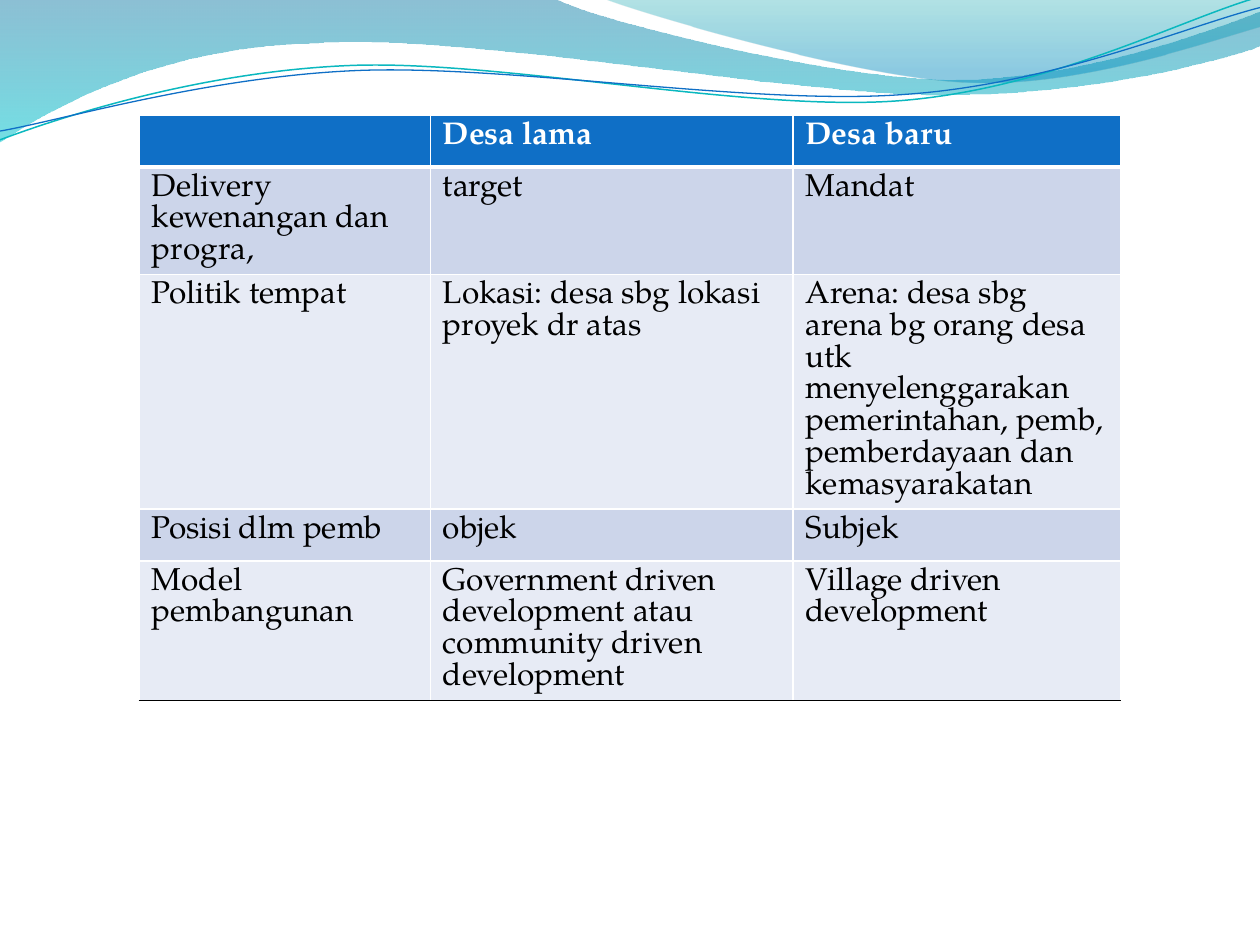
from dataclasses import dataclass
from math import cos, radians, sin
from typing import NamedTuple

from lxml.etree import SubElement
from pptx import Presentation
from pptx.dml.color import RGBColor as Rgb
from pptx.oxml.ns import qn
from pptx.util import Emu, Inches, Pt


class Point(NamedTuple):
    x: float
    y: float


class Curve(NamedTuple):
    lead: Point
    pull: Point
    end: Point


class Stop(NamedTuple):
    position: float
    color: str
    opacity: int


class Edge(NamedTuple):
    color: str
    points: float


@dataclass(frozen=True)
class Theme:
    font: str = "TeX Gyre Pagella"
    text_size: float = 18
    heading: str = "FFFFFF"
    text: str = "000000"
    header_fill: str = "0F6FC6"
    bands: tuple = ("CCD5EA", "E7EBF5")
    grid: Edge = Edge("FFFFFF", 1)
    header_rule: Edge = Edge("FFFFFF", 3)
    closing_rule: Edge = Edge("000000", 1)


@dataclass(frozen=True)
class Wave:
    start: Point
    steps: tuple
    stops: tuple = ()
    edge: Edge | None = None
    tilt: float = 0
    pivot: Point = Point(0, 0)


THEME = Theme()
SLIDE_WIDTH, SLIDE_HEIGHT = Inches(10), Inches(7.5)
GRID_COLUMNS = 100


def curves(*values: float) -> tuple:
    """Group a flat run of coordinates into Bézier curves of three points."""
    points = [Point(*pair) for pair in zip(values[::2], values[1::2])]
    return tuple(Curve(*points[i:i + 3]) for i in range(0, len(points), 3))


WAVES = (
    Wave(Point(0, 0),
         (Point(44, -0.1),
          *curves(47.6, 1.7, 66.4, 6.3, 75.8, 6.3, 85.3, 6.3, 95.8, 2.6, 100, 0.9),
          Point(100.1, 3.6),
          *curves(98.3, 4.4, 87, 7.6, 74.6, 7.5, 62.2, 7.5, 38.2, 2.8, 25.7, 3.4,
                  12.9, 3.6, 4.6, 8.3, -0.1, 11.3)),
         stops=(Stop(0, "0074A1", 45), Stop(1, "00C6CF", 55))),
    Wave(Point(47.9, -0.1),
         (*curves(50.9, 1.1, 68.2, 6.2, 76.9, 6.5, 85.6, 6.9, 96.1, 3.2, 100, 2.1),
          Point(100, 0)),
         stops=(Stop(0, "00A1A9", 30), Stop(0.8, "008BBF", 45))),
    Wave(Point(0, 11.1),
         curves(4.8, 9.3, 15.8, 5.7, 27.7, 5.2, 39.5, 4.7, 59.3, 8.9, 71.3, 8,
                83.3, 7.1, 93.8, 1.5, 99.8, -0.2),
         edge=Edge("0AB8BF", 0.85), tilt=-2.7, pivot=Point(49.9, 5.75)),
    Wave(Point(0, 10.4),
         curves(4.7, 9.6, 16.4, 6.1, 28.3, 5.6, 40.3, 5.1, 59.7, 8.4, 71.7, 7.5,
                83.6, 6.7, 94.1, 2.1, 100, 0.6),
         edge=Edge("0F6FC6", 0.75), tilt=-2.7, pivot=Point(49.95, 5.9)),
)

TABLE_ORIGIN = Point(11.05, 9.15)
COLUMN_WIDTHS = (23.1, 28.8, 26)
ROW_HEIGHT = 4.1
COMPARISON = (
    ("", "Desa lama", "Desa baru"),
    ("Delivery kewenangan dan progra,", "target", "Mandat"),
    ("Politik tempat", "Lokasi: desa sbg lokasi proyek dr atas",
     "Arena: desa sbg arena bg orang desa utk menyelenggarakan pemerintahan, "
     "pemb, pemberdayaan dan kemasyarakatan"),
    ("Posisi dlm pemb", "objek", "Subjek"),
    ("Model pembangunan",
     "Government driven development atau community driven development",
     "Village driven development"),
)


def span(units: float) -> Emu:
    """Convert grid units to a slide length."""
    return Emu(round(SLIDE_WIDTH * units / GRID_COLUMNS))


def place(point: Point, wave: Wave) -> tuple:
    """Return a point's slide position before the wave is tilted."""
    turn = radians(-wave.tilt)
    dx, dy = point.x - wave.pivot.x, point.y - wave.pivot.y
    return (span(wave.pivot.x + dx * cos(turn) - dy * sin(turn)),
            span(wave.pivot.y + dx * sin(turn) + dy * cos(turn)))


def bend(ribbon, steps: tuple) -> None:
    """Join each curve's three straight segments into one cubic segment."""
    segments = iter(ribbon._element.spPr.findall(".//" + qn("a:lnTo")))
    for step in steps:
        first = next(segments)
        if isinstance(step, Curve):
            cubic = first.makeelement(qn("a:cubicBezTo"))
            first.addprevious(cubic)
            for segment in (first, next(segments), next(segments)):
                cubic.append(segment[0])
                segment.getparent().remove(segment)


def draw_wave(slide, wave: Wave) -> None:
    """Draw a gradient band or a thin open line."""
    route = [point for step in wave.steps
             for point in (step if isinstance(step, Curve) else (step,))]
    builder = slide.shapes.build_freeform(*place(wave.start, wave))
    builder.add_line_segments([place(point, wave) for point in route],
                              close=bool(wave.stops))
    ribbon = builder.convert_to_shape()
    bend(ribbon, wave.steps)
    ribbon.rotation = wave.tilt
    ribbon.shadow.inherit = False
    if wave.edge:
        ribbon.fill.background()
        ribbon.line.color.rgb = Rgb.from_string(wave.edge.color)
        ribbon.line.width = Pt(wave.edge.points)
        return
    ribbon.line.fill.background()
    ribbon.fill.gradient()
    ribbon.fill.gradient_angle = 270
    for mark, stop in zip(ribbon.fill.gradient_stops, wave.stops):
        mark.position = stop.position
        mark.color.rgb = Rgb.from_string(stop.color)
    tints = ribbon._element.spPr.findall(".//" + qn("a:gs") + "/" + qn("a:srgbClr"))
    for tint, stop in zip(tints, wave.stops):
        SubElement(tint, qn("a:alpha"), val=str(stop.opacity * 1000))


def draw_borders(cell, edges: dict) -> None:
    """Give a cell its left, right, top and bottom borders."""
    properties = cell._tc.get_or_add_tcPr()
    for side in ("L", "R", "T", "B"):
        edge = edges.get(side, THEME.grid)
        border = SubElement(properties, qn(f"a:ln{side}"), w=str(Pt(edge.points)))
        paint = SubElement(border, qn("a:solidFill"))
        SubElement(paint, qn("a:srgbClr"), val=edge.color)


def draw_cell(cell, words: str, row: int) -> None:
    """Write and colour one cell according to its row."""
    header = row == 0
    edges = {}
    if row < 2:
        edges["B" if header else "T"] = THEME.header_rule
    if row == len(COMPARISON) - 1:
        edges["B"] = THEME.closing_rule
    draw_borders(cell, edges)
    cell.fill.solid()
    cell.fill.fore_color.rgb = Rgb.from_string(
        THEME.header_fill if header else THEME.bands[(row - 1) % 2])
    if not words:
        return
    phrase = cell.text_frame.paragraphs[0].add_run()
    phrase.text = words
    style = {"name": THEME.font, "size": Pt(THEME.text_size), "bold": header}
    for attribute, value in style.items():
        setattr(phrase.font, attribute, value)
    phrase.font.color.rgb = Rgb.from_string(THEME.heading if header else THEME.text)


def draw_comparison(slide) -> None:
    """Draw the table that compares the old and the new village."""
    comparison = slide.shapes.add_table(
        len(COMPARISON), len(COLUMN_WIDTHS), span(TABLE_ORIGIN.x), span(TABLE_ORIGIN.y),
        span(sum(COLUMN_WIDTHS)), span(ROW_HEIGHT * len(COMPARISON))).table
    for column, width in zip(comparison.columns, COLUMN_WIDTHS):
        column.width = span(width)
    for row, entries in enumerate(COMPARISON):
        for column, words in enumerate(entries):
            draw_cell(comparison.cell(row, column), words, row)


deck = Presentation()
deck.slide_width, deck.slide_height = SLIDE_WIDTH, SLIDE_HEIGHT
village_slide = deck.slides.add_slide(deck.slide_layouts[6])
for ribbon_wave in WAVES:
    draw_wave(village_slide, ribbon_wave)
draw_comparison(village_slide)
deck.save("out.pptx")
